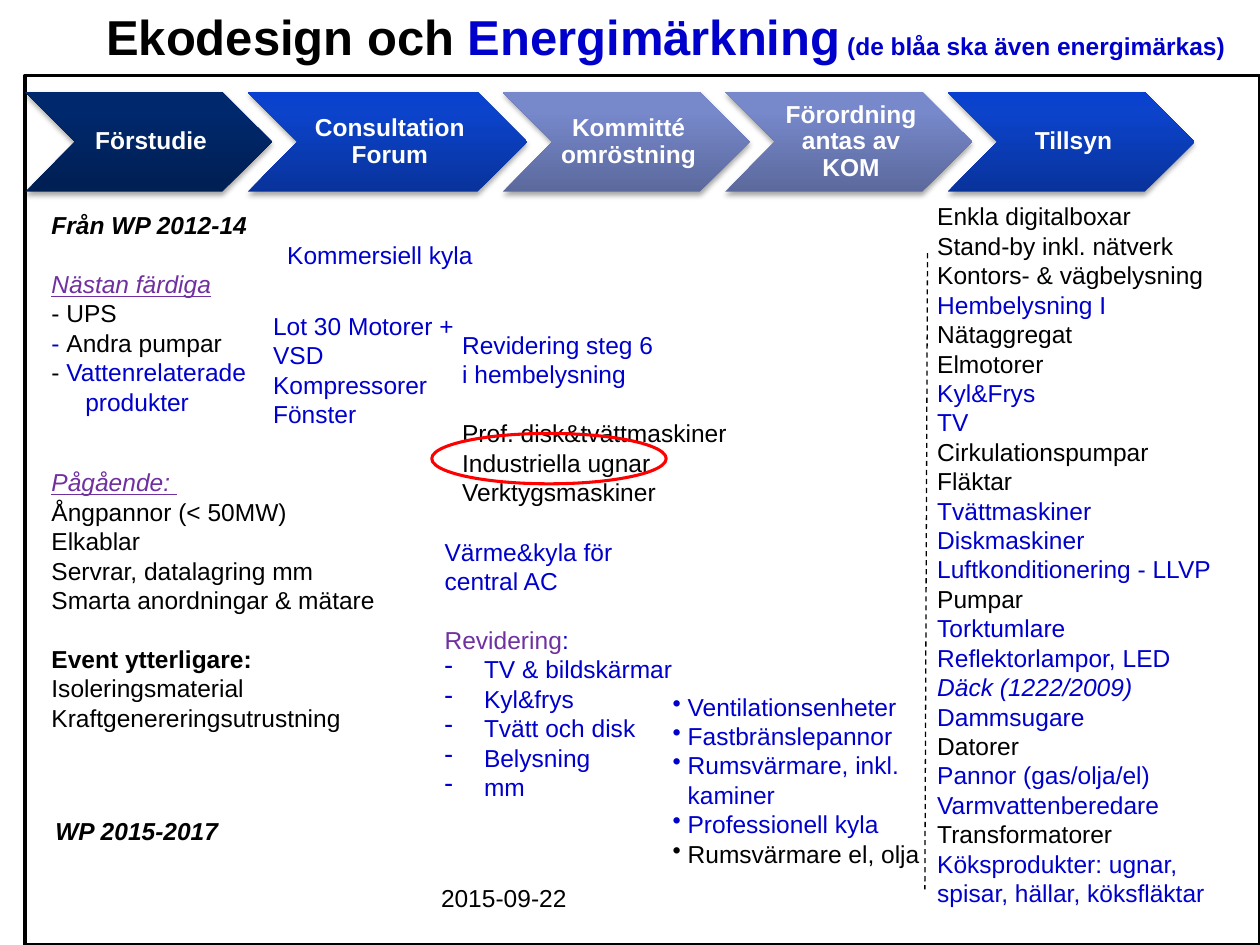
from copy import deepcopy
from dataclasses import dataclass

from lxml import etree
from pptx import Presentation
from pptx import util as u
from pptx.dml.color import RGBColor
from pptx.enum import dml, shapes, text
from pptx.oxml import ns


@dataclass(frozen=True)
class Theme:
    font: str = "Arial"
    body: float = 14
    heading: float = 28
    line_gap: float = 16.8
    black: str = "000000"
    blue: str = "0000CC"
    purple: str = "7030A0"
    red: str = "FF0000"
    white: str = "FFFFFF"
    navy_stops: tuple = ("001F53", "00286C", "00286C")
    royal_stops: tuple = ("09339C", "0B43CB", "0841D0")
    lavender_stops: tuple = ("5B699C", "7788CB", "7688CD")


THEME = Theme()


@dataclass(frozen=True)
class Run:
    wording: str
    color: str = THEME.black
    bold: bool = False
    italic: bool = False
    underline: bool = False
    size: float = THEME.body


@dataclass(frozen=True)
class Line:
    runs: tuple[Run, ...]
    gap: float = 0
    bullet: str = ""
    hanging: float = 0


@dataclass(frozen=True)
class Block:
    left: float
    top: float
    width: float
    height: float
    lines: list[Line]
    wrap: bool = True


@dataclass(frozen=True)
class Stage:
    label: str
    width: float
    stops: tuple[str, str, str]


def line(wording: str, color: str = THEME.black, gap: float = 0, **style: bool) -> Line:
    return Line((Run(wording, color, **style),), gap)


def black(*wordings: str) -> list[Line]:
    return [line(wording) for wording in wordings]


def blue(*wordings: str) -> list[Line]:
    return [line(wording, THEME.blue) for wording in wordings]


def bulleted(lines: list[Line], bullet: str, hanging: float) -> list[Line]:
    return [Line(item.runs, item.gap, bullet, hanging) for item in lines]


def add_run(paragraph, run: Run) -> None:
    piece = paragraph.add_run()
    piece.text = run.wording
    font = piece.font
    font.name, font.size = THEME.font, u.Pt(run.size)
    font.bold, font.italic, font.underline = run.bold, run.italic, run.underline
    font.color.rgb = RGBColor.from_string(run.color)


def fill_lines(frame, lines: list[Line]) -> None:
    for index, item in enumerate(lines):
        paragraph = frame.add_paragraph() if index else frame.paragraphs[0]
        if item.gap:
            paragraph.space_before = u.Pt(item.gap)
        if item.hanging:
            properties = paragraph._p.get_or_add_pPr()
            properties.set("marL", str(u.Pt(item.hanging)))
            properties.set("indent", str(-u.Pt(item.hanging)))
            if item.bullet:
                etree.SubElement(properties, ns.qn("a:buChar"), char=item.bullet)
        for run in item.runs:
            add_run(paragraph, run)


def add_block(slide, block: Block):
    box = slide.shapes.add_textbox(
        u.Pt(block.left), u.Pt(block.top), u.Pt(block.width), u.Pt(block.height))
    box.text_frame.word_wrap = block.wrap
    fill_lines(box.text_frame, block.lines)
    return box.text_frame


def set_insets(frame, left: float, others: float) -> None:
    frame.margin_left = u.Pt(left)
    frame.margin_top = frame.margin_right = frame.margin_bottom = u.Pt(others)


def add_outline(slide, kind, left: float, top: float, width: float, height: float,
                color: str, weight: float) -> None:
    outline = slide.shapes.add_shape(kind, u.Pt(left), u.Pt(top), u.Pt(width), u.Pt(height))
    outline.shadow.inherit = False
    outline.fill.background()
    outline.line.color.rgb = RGBColor.from_string(color)
    outline.line.width = u.Pt(weight)


def add_stage(slide, stage: Stage, left: float, top: float, height: float) -> None:
    chevron = slide.shapes.add_shape(
        shapes.MSO_SHAPE.CHEVRON, u.Pt(left), u.Pt(top), u.Pt(stage.width), u.Pt(height))
    chevron.line.fill.background()
    chevron.fill.gradient()
    chevron.fill.gradient_angle = 90
    properties = chevron._element.spPr
    stop_list = properties.find(".//" + ns.qn("a:gsLst"))
    stop_list.append(deepcopy(stop_list[-1]))
    for stop, color, position in zip(chevron.fill.gradient_stops, stage.stops, (0, 0.8, 1)):
        stop.color.rgb = RGBColor.from_string(color)
        stop.position = position
    chevron.shadow.inherit = False
    shadow = etree.SubElement(
        properties.find(ns.qn("a:effectLst")), ns.qn("a:outerShdw"),
        blurRad=str(u.Pt(3.1)), dist=str(u.Pt(1.8)), dir="5400000", rotWithShape="0")
    shade = etree.SubElement(shadow, ns.qn("a:srgbClr"), val=THEME.black)
    etree.SubElement(shade, ns.qn("a:alpha"), val="35000")
    frame = chevron.text_frame
    frame.word_wrap = True
    frame.vertical_anchor = text.MSO_ANCHOR.MIDDLE
    set_insets(frame, 4.2, 1.4)
    fill_lines(frame, [line(stage.label, THEME.white, bold=True)])
    frame.paragraphs[0].alignment = text.PP_ALIGN.CENTER
    frame.paragraphs[0].line_spacing = 0.9


def add_title(slide) -> None:
    title = slide.shapes.title
    title.left, title.top, title.width, title.height = u.Pt(49), u.Pt(0), u.Pt(663), u.Pt(54.7)
    frame = title.text_frame
    frame.auto_size = text.MSO_AUTO_SIZE.NONE
    frame.word_wrap = True
    frame.vertical_anchor = text.MSO_ANCHOR.TOP
    fill_lines(frame, [Line((
        Run("Ekodesign och ", bold=True, size=THEME.heading),
        Run("Energimärkning", THEME.blue, bold=True, size=THEME.heading),
        Run(" (de blåa ska även energimärkas)", THEME.blue, bold=True)))])
    frame.paragraphs[0].alignment = text.PP_ALIGN.CENTER


GAP = THEME.line_gap
STAGES = [
    Stage("Förstudie", 141.1, THEME.navy_stops),
    Stage("Consultation Forum", 159.8, THEME.royal_stops),
    Stage("Kommitté omröstning", 141.1, THEME.lavender_stops),
    Stage("Förordning antas av KOM", 141.1, THEME.lavender_stops),
    Stage("Tillsyn", 141.1, THEME.royal_stops),
]
BLOCKS = [
    Block(22.3, 116.6, 131.8, 143.3, [
        line("Från WP 2012-14", bold=True, italic=True),
        line("Nästan färdiga", THEME.purple, GAP, italic=True, underline=True),
        line("- UPS"),
        Line((Run("- ", THEME.blue), Run("Andra pumpar"))),
        Line((Run("- "), Run("Vattenrelaterade produkter", THEME.blue)), hanging=19.4)]),
    Block(528.5, 111.6, 194.4, 448.6, [
        *black("Enkla digitalboxar", "Stand-by inkl. nätverk", "Kontors- & vägbelysning"),
        *blue("Hembelysning I"), *black("Nätaggregat", "Elmotorer"),
        *blue("Kyl&Frys", "TV"), *black("Cirkulationspumpar", "Fläktar"),
        *blue("Tvättmaskiner", "Diskmaskiner", "Luftkonditionering - LLVP"),
        *black("Pumpar"), *blue("Torktumlare", "Reflektorlampor, LED"),
        line("Däck (1222/2009)", THEME.blue, italic=True),
        *blue("Dammsugare"), *black("Datorer"),
        *blue("Pannor (gas/olja/el)", "Varmvattenberedare"), *black("Transformatorer"),
        *blue("Köksprodukter: ugnar, spisar, hällar, köksfläktar")]),
    Block(157, 133.9, 121, 41, blue("Kommersiell kyla"), wrap=False),
    Block(247, 303.1, 153.4, 159.8, [
        *blue("Värme&kyla för central AC"),
        Line((Run("Revidering", THEME.purple), Run(":", THEME.blue)), GAP),
        *bulleted(blue("TV & bildskärmar", "Kyl&frys", "Tvätt och disk", "Belysning", "mm"),
                  "-", 22.5)]),
    Block(377.3, 391.7, 161.3, 108.7, bulleted([
        *blue("Ventilationsenheter", "Fastbränslepannor", "Rumsvärmare, inkl. kaminer",
              "Professionell kyla"),
        *black("Rumsvärmare el, olja")], "•", 8.6)),
    Block(22.3, 263.5, 209.5, 159.8, [
        line("Pågående: ", THEME.purple, italic=True, underline=True),
        *black("Ångpannor (< 50MW)", "Elkablar", "Servrar, datalagring mm",
               "Smarta anordningar & mätare"),
        line("Event ytterligare:", gap=GAP, bold=True),
        *black("Isoleringsmaterial", "Kraftgenereringsutrustning")]),
    Block(257, 185, 166.3, 126, [
        *blue("Revidering steg 6", "i hembelysning"),
        line("Prof. disk&tvättmaskiner", gap=GAP),
        *black("Industriella ugnar", "Verktygsmaskiner")], wrap=False),
    Block(24.5, 463, 209.5, 24.5, [line("WP 2015-2017", bold=True, italic=True)]),
    Block(149, 174.2, 131.8, 74.9, blue("Lot 30 Motorer + VSD", "Kompressorer", "Fönster")),
]


def main() -> None:
    deck = Presentation()
    deck.slide_width, deck.slide_height = u.Pt(720), u.Pt(540)
    slide = deck.slides.add_slide(deck.slide_layouts[5])
    add_title(slide)
    add_outline(slide, shapes.MSO_SHAPE.RECTANGLE, 14.4, 43.2, 705.6, 496.8, THEME.black, 2)
    divider = slide.shapes.add_connector(
        shapes.MSO_CONNECTOR.STRAIGHT, u.Pt(530), u.Pt(144.7), u.Pt(528.5), u.Pt(508.3))
    divider.line.color.rgb = RGBColor.from_string(THEME.black)
    divider.line.width = u.Pt(0.75)
    divider.line.dash_style = dml.MSO_LINE.DASH
    etree.SubElement(divider._element.spPr, ns.qn("a:effectLst"))
    left, overlap = 14.4, 14
    for stage in STAGES:
        add_stage(slide, stage, left, 52.6, 56.9)
        left += stage.width - overlap
    for block in BLOCKS:
        add_block(slide, block)
    add_outline(slide, shapes.MSO_SHAPE.OVAL, 246.7, 247.7, 134, 28.8, THEME.red, 1.75)
    date = add_block(slide, Block(252, 485.3, 149.8, 36, black("2015-09-22")))
    date.vertical_anchor = text.MSO_ANCHOR.BOTTOM
    set_insets(date, 0, 0)
    deck.save("out.pptx")


if __name__ == "__main__":
    main()
